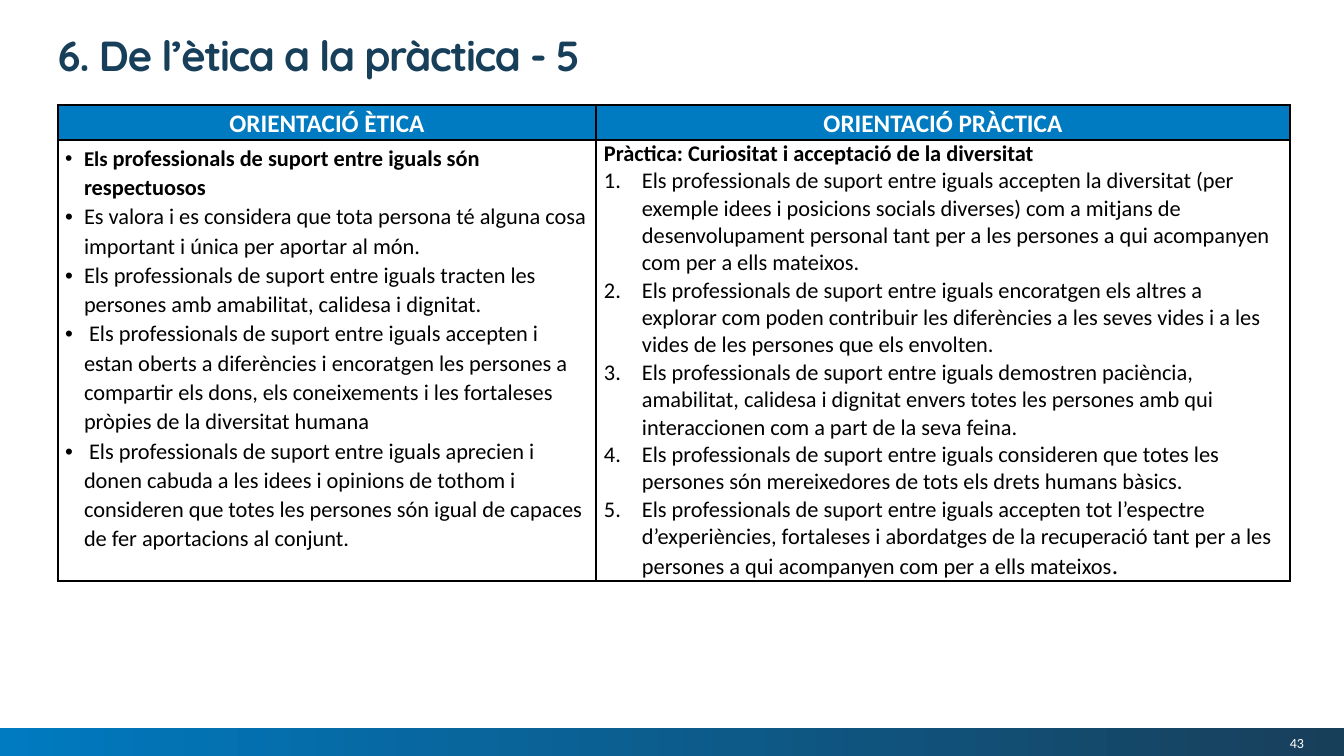
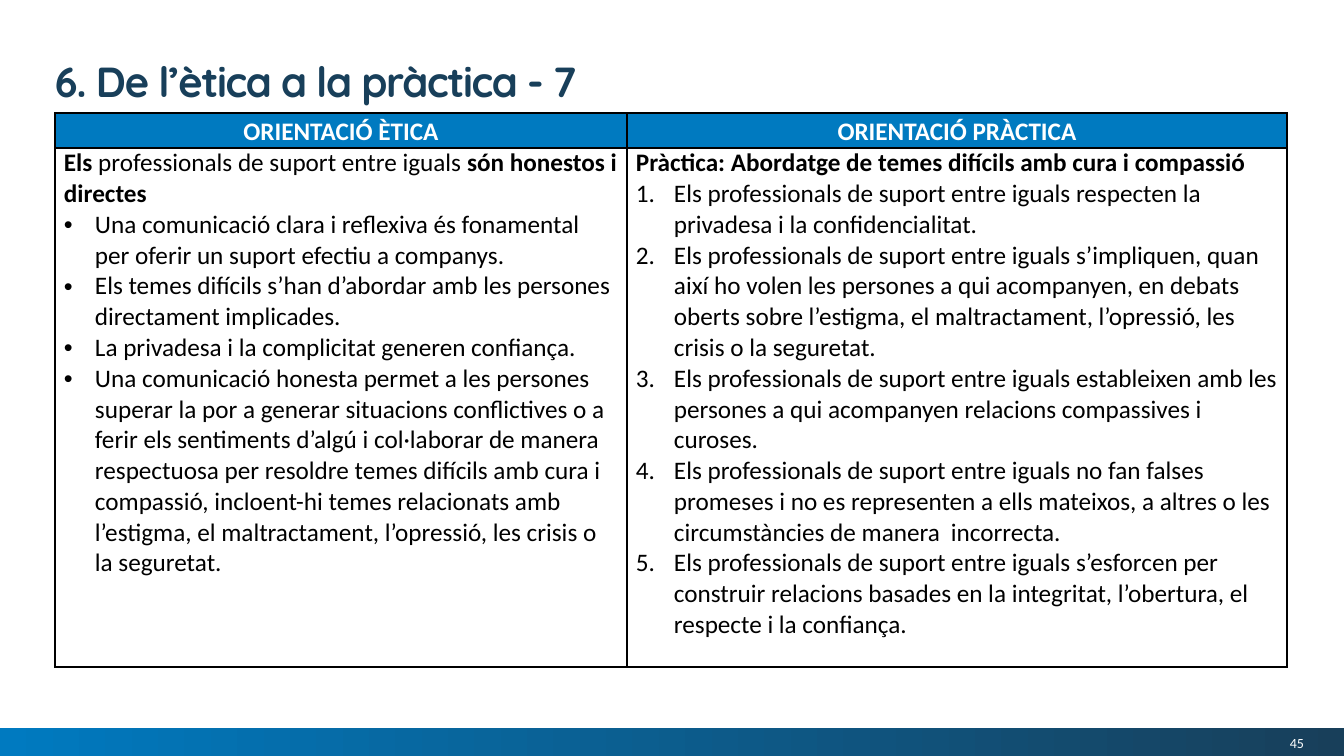
import pptx
import pptx.dml.color
import pptx.enum.shapes
import pptx.enum.text
import pptx.util
from lxml import etree

RGB = pptx.dml.color.RGBColor
ALIGN = pptx.enum.text.PP_ALIGN
ANCHOR = pptx.enum.text.MSO_ANCHOR
Pt = pptx.util.Pt
A = "{http://schemas.openxmlformats.org/drawingml/2006/main}"

BLUE = RGB(0x00, 0x7A, 0xC0)
NAVY = RGB(0x18, 0x3F, 0x5A)
WHITE = RGB(0xFF, 0xFF, 0xFF)
BLACK = RGB(0x00, 0x00, 0x00)

PX = 914400 / 100.8
SLIDE_W, SLIDE_H = 1344, 756
BAND_TOP = 728
HEADER_H = 35
HEADERS = ["ORIENTACIÓ ÈTICA", "ORIENTACIÓ PRÀCTICA"]

HEADER_FONT = {"name": "Calibri", "size": Pt(18), "bold": True}
NUMBER_FONT = {"name": "Calibri", "size": Pt(10)}
TITLE_FONT = {"name": "Quicksand", "size": Pt(30), "bold": True}
BOLD = {"bold": True}


def px(*lengths):
    """Turn lengths in px into EMU."""
    return [round(n * PX) for n in lengths]


def add_runs(p, runs, color, font):
    """Add runs to p; each is a text, or a text with the font values that differ."""
    for run in [runs] if isinstance(runs, str) else runs:
        text, changes = (run, {}) if isinstance(run, str) else run
        r = p.add_run()
        r.text = text
        r.font.color.rgb = color
        for name, value in {**font, **changes}.items():
            setattr(r.font, name, value)


# Each body cell: insets are left, top, right, bottom; "lead" has no marker.
SLIDES = [
    {
        "title": "6. De l’ètica a la pràctica - 5", "title_at": (48, 29),
        "number": "43", "table_at": (58, 105), "columns": (538, 694),
        "body_h": 441, "size": 16,
        "cells": [
            {
                "insets": (7, 3, 4, 0), "indent": 19, "spacing": 1.07,
                "marker": ("buChar", "char", "•"), "lead": None,
                "items": [
                    [("Els ", {"bold": True, "size": Pt(15)}),
                     ("professionals de suport entre iguals són respectuosos", BOLD)],
                    "Es valora i es considera que tota persona té alguna cosa important i única per aportar al món.",
                    "Els professionals de suport entre iguals tracten les persones amb amabilitat, calidesa i dignitat.",
                    " Els professionals de suport entre iguals accepten i estan oberts a diferències i encoratgen "
                    "les persones a compartir els dons, els coneixements i les fortaleses pròpies de la diversitat humana",
                    " Els professionals de suport entre iguals aprecien i donen cabuda a les idees i opinions de "
                    "tothom i consideren que totes les persones són igual de capaces de fer aportacions al conjunt.",
                ],
            },
            {
                "insets": (8, 0, 8, 0), "indent": 38, "spacing": 1.0,
                "marker": ("buAutoNum", "type", "arabicPeriod"),
                "lead": [("Pràctica: Curiositat i acceptació de la diversitat", BOLD)],
                "items": [
                    "Els professionals de suport entre iguals accepten la diversitat (per exemple idees i posicions "
                    "socials diverses) com a mitjans de desenvolupament personal tant per a les persones a qui "
                    "acompanyen com per a ells mateixos.",
                    "Els professionals de suport entre iguals encoratgen els altres a explorar com poden contribuir "
                    "les diferències a les seves vides i a les vides de les persones que els envolten.",
                    "Els professionals de suport entre iguals demostren paciència, amabilitat, calidesa i dignitat "
                    "envers totes les persones amb qui interaccionen com a part de la seva feina.",
                    "Els professionals de suport entre iguals consideren que totes les persones són mereixedores de "
                    "tots els drets humans bàsics.",
                    ["Els professionals de suport entre iguals accepten tot l’espectre d’experiències, fortaleses i "
                     "abordatges de la recuperació tant per a les persones a qui acompanyen com per a ells mateixos",
                     (".", {"size": Pt(18)})],
                ],
            },
        ],
    },
    {
        "title": "6. De l’ètica a la pràctica - 7", "title_at": (45, 55),
        "number": "45", "table_at": (55, 113), "columns": (572, 660),
        "body_h": 519, "size": 18,
        "cells": [
            {
                "insets": (9, 0, 9, 0), "indent": 31, "spacing": 1.0,
                "marker": ("buChar", "char", "•"),
                "lead": [("Els ", BOLD), "professionals de suport entre iguals",
                         (" són honestos i directes", BOLD)],
                "items": [
                    "Una comunicació clara i reflexiva és fonamental per oferir un suport efectiu a companys.",
                    "Els temes difícils s’han d’abordar amb les persones directament implicades.",
                    "La privadesa i la complicitat generen confiança.",
                    "Una comunicació honesta permet a les persones superar la por a generar situacions conflictives "
                    "o a ferir els sentiments d’algú i col·laborar de manera respectuosa per resoldre temes difícils "
                    "amb cura i compassió, incloent-hi temes relacionats amb l’estigma, el maltractament, l’opressió, "
                    "les crisis o la seguretat.",
                ],
            },
            {
                "insets": (9, 0, 9, 0), "indent": 38, "spacing": 1.0,
                "marker": ("buAutoNum", "type", "arabicPeriod"),
                "lead": [("Pràctica: Abordatge de temes difícils amb cura i compassió", BOLD)],
                "items": [
                    "Els professionals de suport entre iguals respecten la privadesa i la confidencialitat.",
                    "Els professionals de suport entre iguals s’impliquen, quan així ho volen les persones a qui "
                    "acompanyen, en debats oberts sobre l’estigma, el maltractament, l’opressió, les crisis o la "
                    "seguretat.",
                    "Els professionals de suport entre iguals estableixen amb les persones a qui acompanyen relacions "
                    "compassives i curoses.",
                    ["Els professionals de suport entre iguals no fan falses promeses i no es representen a ells "
                     "mateixos, a altres o les circumstàncies de manera ",
                     (" ", {"size": Pt(16)}), "incorrecta."],
                    "Els professionals de suport entre iguals s’esforcen per construir relacions basades en la "
                    "integritat, l’obertura, el respecte i la confiança.",
                ],
            },
        ],
    },
]

prs = pptx.Presentation()
prs.slide_width, prs.slide_height = px(SLIDE_W, SLIDE_H)

for content in SLIDES:
    s = prs.slides.add_slide(prs.slide_layouts[6])

    # Footer band and slide number
    band = s.shapes.add_shape(pptx.enum.shapes.MSO_SHAPE.RECTANGLE,
                              *px(0, BAND_TOP, SLIDE_W, SLIDE_H - BAND_TOP))
    band.shadow.inherit = False
    band.line.fill.background()
    band.fill.gradient()
    band.fill.gradient_angle = 0
    for stop, color in zip(band.fill.gradient_stops, (BLUE, NAVY)):
        stop.color.rgb = color

    tf = s.shapes.add_textbox(*px(1123, 731, 181, 24)).text_frame
    tf.word_wrap = True
    tf.vertical_anchor = ANCHOR.MIDDLE
    tf.margin_left = tf.margin_top = tf.margin_right = tf.margin_bottom = 0
    p = tf.paragraphs[0]
    p.alignment = ALIGN.RIGHT
    add_runs(p, content["number"], WHITE, NUMBER_FONT)

    # Two-column table
    body_font = {"name": "Calibri", "size": Pt(content["size"]), "bold": False}
    table_w, table_h = sum(content["columns"]), HEADER_H + content["body_h"]
    table = s.shapes.add_table(2, 2, *px(*content["table_at"], table_w, table_h)).table
    table.first_row = table.horz_banding = False
    for row, height in zip(table.rows, px(HEADER_H, content["body_h"])):
        row.height = height
    for column, width in zip(table.columns, px(*content["columns"])):
        column.width = width

    for cell in table.iter_cells():
        tcPr = cell._tc.get_or_add_tcPr()
        for side in ("lnL", "lnR", "lnT", "lnB"):
            ln = etree.SubElement(tcPr, A + side, w=str(Pt(1)))
            fill = etree.SubElement(ln, A + "solidFill")
            etree.SubElement(fill, A + "srgbClr", val=str(BLACK))

    for col, (header, body) in enumerate(zip(HEADERS, content["cells"])):
        cell = table.cell(0, col)
        cell.fill.solid()
        cell.fill.fore_color.rgb = BLUE
        cell.margin_left, cell.margin_top, cell.margin_right, cell.margin_bottom = px(8, 0, 8, 0)
        p = cell.text_frame.paragraphs[0]
        p.alignment = ALIGN.CENTER
        p.line_spacing = 1.13
        p.space_after = Pt(9)
        add_runs(p, header, WHITE, HEADER_FONT)

        cell = table.cell(1, col)
        cell.fill.background()
        cell.margin_left, cell.margin_top, cell.margin_right, cell.margin_bottom = px(*body["insets"])
        tf = cell.text_frame
        p = tf.paragraphs[0]
        if body["lead"]:
            add_runs(p, body["lead"], BLACK, body_font)
            p = None
        for item in body["items"]:
            p = p or tf.add_paragraph()
            p.line_spacing = body["spacing"]
            indent = px(body["indent"])[0]
            pPr = p._p.get_or_add_pPr()
            pPr.set("marL", str(indent))
            pPr.set("indent", str(-indent))
            tag, attribute, value = body["marker"]
            if tag == "buChar":
                etree.SubElement(pPr, A + "buFont", typeface="Arial")
            etree.SubElement(pPr, A + tag, {attribute: value})
            add_runs(p, item, BLACK, body_font)
            p = None

    # Title
    tf = s.shapes.add_textbox(*px(*content["title_at"], 1080, 47)).text_frame
    tf.word_wrap = True
    p = tf.paragraphs[0]
    p.line_spacing = Pt(33)
    add_runs(p, content["title"], NAVY, TITLE_FONT)
    p.runs[0].font._element.set("spc", "-100")

prs.save("out.pptx")
